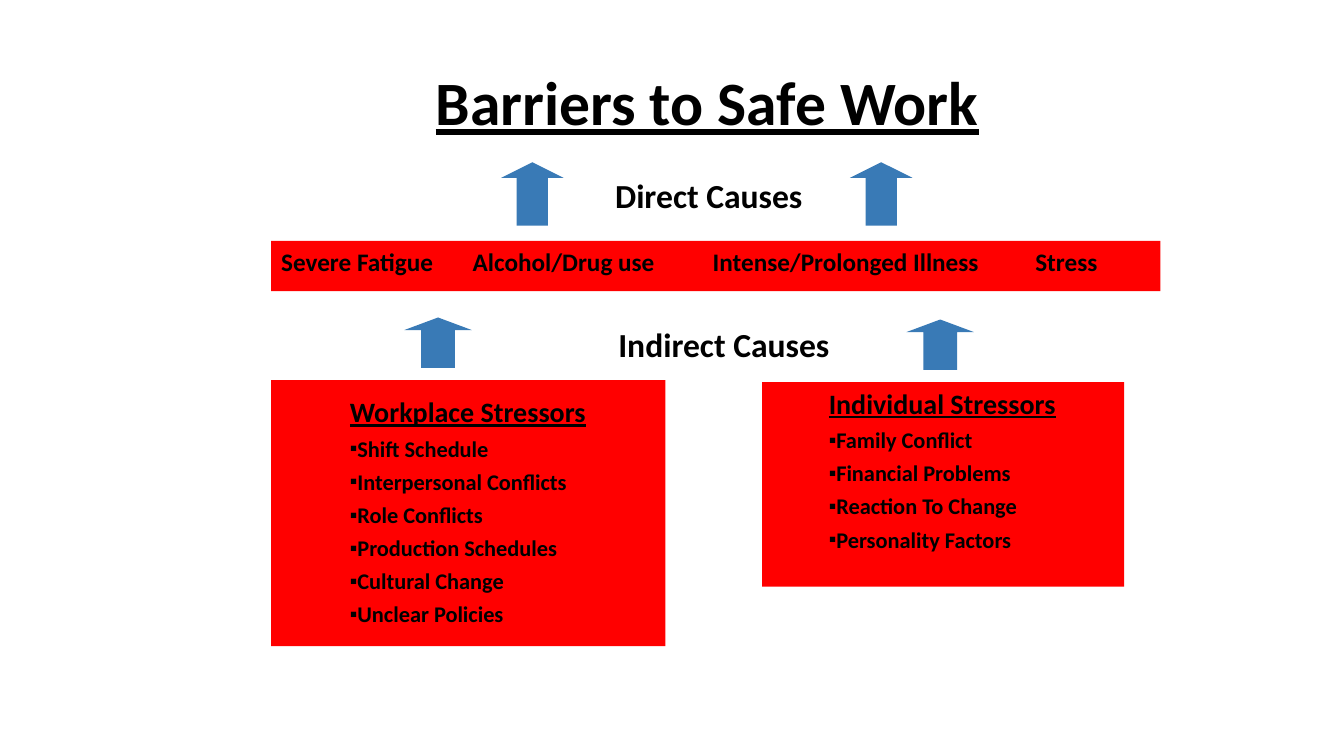
from dataclasses import dataclass

from lxml import etree
from pptx import Presentation
from pptx.dml.color import RGBColor
from pptx.enum.shapes import MSO_SHAPE
from pptx.enum.text import MSO_ANCHOR, MSO_AUTO_SIZE, PP_ALIGN
from pptx.oxml.ns import qn
from pptx.util import Inches, Pt

RECTANGLE, UP_ARROW = MSO_SHAPE.RECTANGLE, MSO_SHAPE.UP_ARROW
TOP, MIDDLE = MSO_ANCHOR.TOP, MSO_ANCHOR.MIDDLE
LEFT, CENTER = PP_ALIGN.LEFT, PP_ALIGN.CENTER
NO_AUTOFIT = MSO_AUTO_SIZE.NONE
TWO_CONTENT = 3


@dataclass(frozen=True)
class Theme:
    font: str = "Calibri"
    ink: RGBColor = RGBColor(0, 0, 0)
    box: RGBColor = RGBColor(0xFF, 0, 0)
    arrow: RGBColor = RGBColor(0x39, 0x7A, 0xB6)
    title: int = 44
    level: int = 24
    heading: int = 20
    band: int = 18
    item: int = 16


class CausesSlide:
    def __init__(self, deck, theme):
        self.theme = theme
        self.slide = deck.slides.add_slide(deck.slide_layouts[TWO_CONTENT])

    def place(self, shape, box):
        shape.left, shape.top, shape.width, shape.height = map(Inches, box)

    def frame(self, shape, anchor=TOP, insets=(0.1, 0.05, 0.1, 0.05)):
        frame = shape.text_frame
        frame.word_wrap = True
        frame.auto_size = NO_AUTOFIT
        frame.vertical_anchor = anchor
        (frame.margin_left, frame.margin_top,
         frame.margin_right, frame.margin_bottom) = map(Inches, insets)
        return frame

    def style(self, paragraph, size, align=LEFT, underline=False):
        paragraph.alignment = align
        font = paragraph.font
        font.name, font.size, font.bold = self.theme.font, Pt(size), True
        font.underline = underline
        font.color.rgb = self.theme.ink

    def title(self, text, box):
        title = self.slide.shapes.title
        self.place(title, box)
        paragraph = self.frame(title, MIDDLE).paragraphs[0]
        paragraph.text = text
        self.style(paragraph, self.theme.title, underline=True)

    def level_label(self, text, box):
        label = self.slide.shapes.add_textbox(*map(Inches, box))
        paragraph = self.frame(label).paragraphs[0]
        paragraph.text = text
        self.style(paragraph, self.theme.level, CENTER)

    def filled_shape(self, preset, box, color):
        shape = self.slide.shapes.add_shape(preset, *map(Inches, box))
        shape.shadow.inherit = False
        shape.fill.solid()
        shape.fill.fore_color.rgb = color
        shape.line.fill.background()
        return shape

    def up_arrow(self, box):
        arrow = self.filled_shape(UP_ARROW, box, self.theme.arrow)
        arrow.adjustments[0], arrow.adjustments[1] = 0.5, 0.25

    def band(self, causes, stops, box):
        """Draw one bar whose causes stand at tab stops."""
        bar = self.filled_shape(RECTANGLE, box, self.theme.box)
        paragraph = self.frame(bar).paragraphs[0]
        paragraph.text = "\t".join(causes)
        tabs = etree.SubElement(paragraph._p.get_or_add_pPr(), qn("a:tabLst"))
        for stop in stops:
            etree.SubElement(tabs, qn("a:tab"), pos=str(Inches(stop)), algn="l")
        self.style(paragraph, self.theme.band)

    def stressor_panel(self, index, heading, stressors, box, indent, anchor, inset_top):
        panel = self.slide.placeholders[index]
        self.place(panel, box)
        panel.fill.solid()
        panel.fill.fore_color.rgb = self.theme.box
        frame = self.frame(panel, anchor, (0, inset_top, 0, 0))
        frame.text = "\n".join([heading, *stressors])
        for row, paragraph in enumerate(frame.paragraphs):
            is_heading = row == 0
            properties = paragraph._p.get_or_add_pPr()
            properties.set("marL", str(Inches(indent)))
            properties.set("indent", "0")
            if is_heading:
                etree.SubElement(properties, qn("a:buNone"))
            else:
                etree.SubElement(properties, qn("a:buSzPct"), val="95000")
                etree.SubElement(properties, qn("a:buChar"), char="▪")
            paragraph.line_spacing = 0.9
            paragraph.space_before = Pt(0 if is_heading else 6.4)
            size = self.theme.heading if is_heading else self.theme.item
            self.style(paragraph, size, underline=is_heading)


def main():
    deck = Presentation()
    deck.slide_width, deck.slide_height = Inches(13.33), Inches(7.5)
    page = CausesSlide(deck, Theme())

    page.title("Barriers to Safe Work", (4.22, 0.55, 5.95, 0.91))
    page.band(
        ["Severe Fatigue", "Alcohol/Drug use", "Intense/Prolonged Illness", "Stress"],
        [1.9, 4.28, 7.48], (2.69, 2.39, 8.82, 0.5))
    page.level_label("Direct Causes", (5.21, 1.69, 3.64, 0.44))
    page.level_label("Indirect Causes", (3.75, 3.16, 6.86, 0.44))

    page.stressor_panel(
        1, "Workplace Stressors",
        ["Shift Schedule", "Interpersonal Conflicts", "Role Conflicts",
         "Production Schedules", "Cultural Change", "Unclear Policies"],
        (2.69, 3.77, 3.91, 2.64), 0.78, MIDDLE, 0)
    page.stressor_panel(
        2, "Individual Stressors",
        ["Family Conflict", "Financial Problems", "Reaction To Change",
         "Personality Factors"],
        (7.56, 3.79, 3.59, 2.03), 0.66, TOP, 0.08)

    for left in (4.97, 8.43):
        page.up_arrow((left, 1.61, 0.62, 0.63))
    for left, top in ((4.01, 3.15), (8.99, 3.17)):
        page.up_arrow((left, top, 0.67, 0.5))

    deck.save("out.pptx")


if __name__ == "__main__":
    main()
